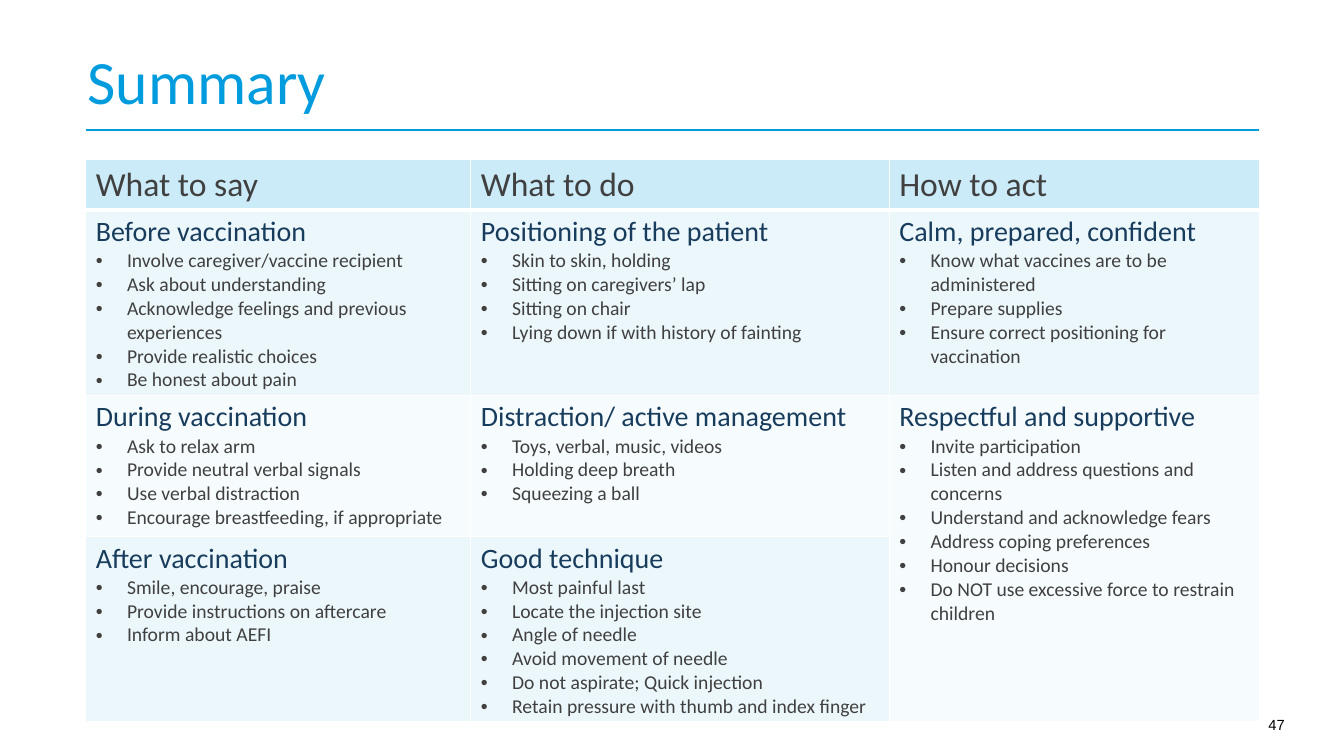
"""Build the vaccination summary slide with its three-column table."""
from dataclasses import dataclass

from lxml import etree
from pptx import Presentation
from pptx import util as u
from pptx.dml.color import RGBColor
from pptx.enum import shapes, text
from pptx.oxml import ns

BLUE = "009CDE"
NAVY = "183C5C"
GREY = "404040"
WHITE = "FFFFFF"
HEADER_FILL = "CCEBF8"
BAND_FILLS = ("ECF7FC", "F6FBFE")
LEFT, RIGHT = 0.85, 12.49
COLUMN_WIDTHS = (3.82, 4.15, 3.67)
ROW_HEIGHTS = (0.5, 1.84, 1.4, 1.84)
HEADERS = ("What to say", "What to do", "How to act")


@dataclass
class Topic:
    row: int
    column: int
    heading: str
    points: tuple[str, ...]


TOPICS = (
    Topic(1, 0, "Before vaccination", (
        "Involve caregiver/vaccine recipient",
        "Ask about understanding",
        "Acknowledge feelings and previous experiences",
        "Provide realistic choices",
        "Be honest about pain")),
    Topic(1, 1, "Positioning of the patient", (
        "Skin to skin, holding",
        "Sitting on caregivers’ lap",
        "Sitting on chair",
        "Lying down if with history of fainting")),
    Topic(1, 2, "Calm, prepared, confident", (
        "Know what vaccines are to be administered",
        "Prepare supplies",
        "Ensure correct positioning for vaccination")),
    Topic(2, 0, "During vaccination", (
        "Ask to relax arm",
        "Provide neutral verbal signals",
        "Use verbal distraction",
        "Encourage breastfeeding, if appropriate")),
    Topic(2, 1, "Distraction/ active management", (
        "Toys, verbal, music, videos",
        "Holding deep breath",
        "Squeezing a ball")),
    Topic(2, 2, "Respectful and supportive", (
        "Invite participation",
        "Listen and address questions and concerns",
        "Understand and acknowledge fears",
        "Address coping preferences",
        "Honour decisions",
        "Do NOT use excessive force to restrain children")),
    Topic(3, 0, "After vaccination", (
        "Smile, encourage, praise",
        "Provide instructions on aftercare",
        "Inform about AEFI")),
    Topic(3, 1, "Good technique", (
        "Most painful last",
        "Locate the injection site",
        "Angle of needle",
        "Avoid movement of needle",
        "Do not aspirate; Quick injection",
        "Retain pressure with thumb and index finger")),
)


def color(value: str) -> RGBColor:
    return RGBColor.from_string(value)


def add_element(parent, tag: str, **attributes: str):
    return etree.SubElement(parent, ns.qn(tag), attributes)


def write(frame, words: str, *, size: float, fill: str = GREY, font: str = "Calibri",
          bullet: bool = False, align=text.PP_ALIGN.LEFT, spacing: float = 1.0) -> None:
    paragraph = frame.add_paragraph() if frame.text else frame.paragraphs[0]
    paragraph.alignment = align
    paragraph.line_spacing = spacing
    if bullet:
        properties = paragraph._p.get_or_add_pPr()
        indent = u.Inches(0.31)
        properties.set("marL", str(indent))
        properties.set("indent", str(-indent))
        add_element(properties, "a:buFont", typeface="Arial")
        add_element(properties, "a:buChar", char="•")
    run = paragraph.add_run()
    run.text = words
    run.font.name = font
    run.font.size = u.Pt(size)
    run.font.bold = False
    run.font.color.rgb = color(fill)


def add_text_box(slide, left: float, top: float, width: float, height: float):
    box = slide.shapes.add_textbox(*map(u.Inches, (left, top, width, height)))
    box.text_frame.word_wrap = True
    return box.text_frame


def style_cell(cell, row: int) -> None:
    properties = cell._tc.get_or_add_tcPr()
    widths = {"L": 1, "R": 1, "T": 3 if row == 1 else 1, "B": 3 if row == 0 else 1}
    for side, width in widths.items():
        line = add_element(properties, f"a:ln{side}", w=str(u.Pt(width)))
        add_element(add_element(line, "a:solidFill"), "a:srgbClr", val=WHITE)
    cell.fill.solid()
    cell.fill.fore_color.rgb = color(BAND_FILLS[(row - 1) % 2] if row else HEADER_FILL)


def add_summary_table(slide) -> None:
    frame = slide.shapes.add_table(
        len(ROW_HEIGHTS), len(COLUMN_WIDTHS), u.Inches(LEFT), u.Inches(1.58),
        u.Inches(sum(COLUMN_WIDTHS)), u.Inches(sum(ROW_HEIGHTS)))
    table = frame.table
    table.first_row = table.horz_banding = False
    for column, width in zip(table.columns, COLUMN_WIDTHS):
        column.width = u.Inches(width)
    for index, height in enumerate(ROW_HEIGHTS):
        table.rows[index].height = u.Inches(height)
        for cell in table.rows[index].cells:
            style_cell(cell, index)
    table.cell(2, 2).merge(table.cell(3, 2))
    for index, header in enumerate(HEADERS):
        write(table.cell(0, index).text_frame, header, size=24)
    for topic in TOPICS:
        cell_text = table.cell(topic.row, topic.column).text_frame
        write(cell_text, topic.heading, size=20, fill=NAVY)
        for point in topic.points:
            write(cell_text, point, size=14, bullet=True)


def add_title(slide) -> None:
    title = add_text_box(slide, LEFT, 0.57, 9.83, 0.6)
    title.vertical_anchor = text.MSO_ANCHOR.BOTTOM
    title.margin_left, title.margin_right = u.Inches(0.02), u.Inches(0.39)
    title.margin_top = title.margin_bottom = 0
    write(title, "Summary", size=44, fill=BLUE, spacing=0.9)
    rule = slide.shapes.add_connector(
        shapes.MSO_CONNECTOR.STRAIGHT, *map(u.Inches, (LEFT, 1.29, RIGHT, 1.29)))
    rule.line.color.rgb = color(BLUE)
    rule.line.width = u.Pt(1.5)
    add_element(rule._element.spPr, "a:effectLst")


def main() -> None:
    presentation = Presentation()
    presentation.slide_width = u.Inches(13.33)
    presentation.slide_height = u.Inches(7.5)
    slide = presentation.slides.add_slide(presentation.slide_layouts[6])
    number = add_text_box(slide, 11.95, 7.05, 0.89, 0.29)
    write(number, "47", size=10.5, fill="000000", font="Arial", align=text.PP_ALIGN.RIGHT)
    add_summary_table(slide)
    add_title(slide)
    presentation.save("out.pptx")


if __name__ == "__main__":
    main()
